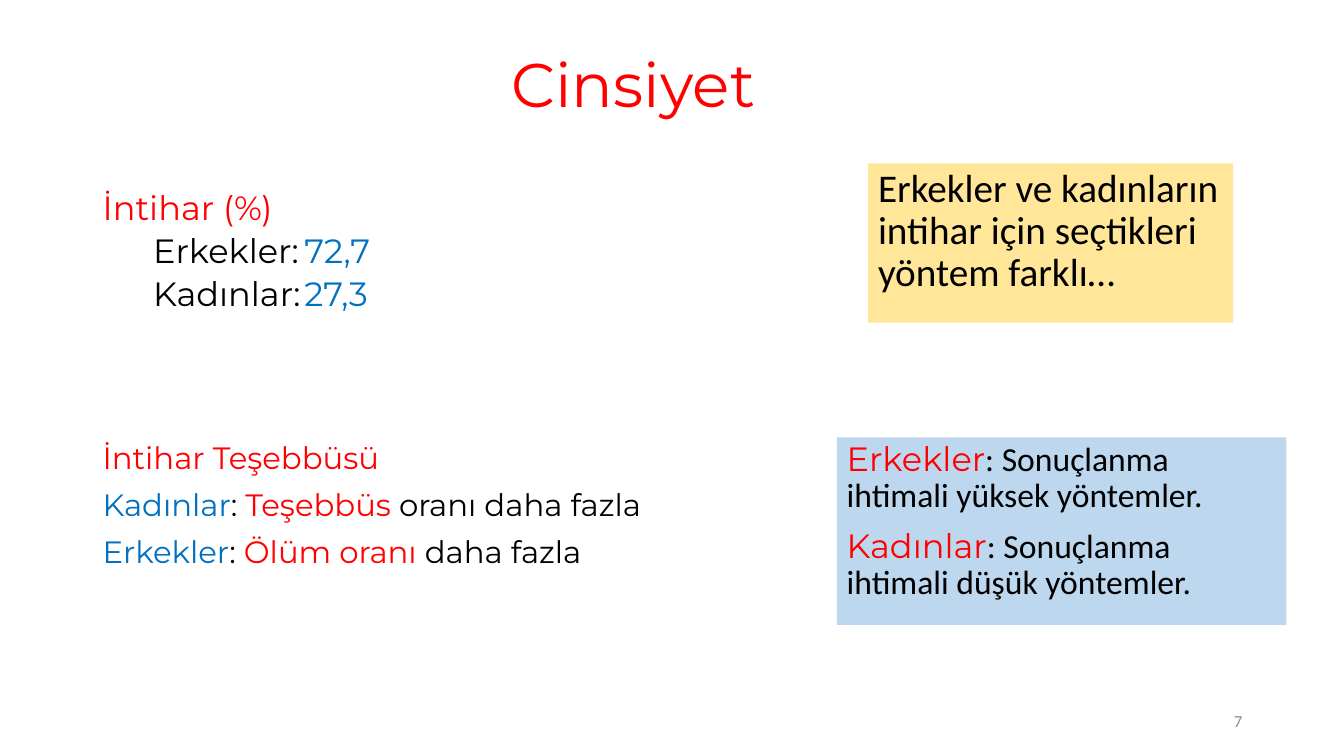
from pptx import Presentation
from pptx import util as u
from pptx.dml import color
from pptx.enum import shapes, text

RED, BLUE, BLACK, GREY = "FF0000", "0070C0", "000000", "8C8C8C"
HEADING, BODY = "Montserrat", "Calibri"


def rgb(value):
    return color.RGBColor.from_string(value)


def write(shape, paragraphs, size, font, space=0, line=0.9,
          align=text.PP_ALIGN.LEFT, anchor=text.MSO_ANCHOR.TOP):
    frame = shape.text_frame
    frame.word_wrap = True
    frame.vertical_anchor = anchor
    for index, runs in enumerate(paragraphs):
        paragraph = frame.paragraphs[0] if index == 0 else frame.add_paragraph()
        paragraph.alignment = align
        paragraph.line_spacing = line
        paragraph.space_before = u.Pt(space)
        paragraph.font.size = u.Pt(size)
        for words, run_color, *run_font in runs:
            run = paragraph.add_run()
            run.text = words
            run.font.name = run_font[0] if run_font else font
            run.font.color.rgb = rgb(run_color)
    return frame


presentation = Presentation()
presentation.slide_width = u.Inches(13.33)
presentation.slide_height = u.Inches(7.5)
slide = presentation.slides.add_slide(presentation.slide_layouts[6])

title = slide.shapes.add_textbox(u.Inches(0.92), u.Inches(0.4), u.Inches(10.72), u.Inches(0.93))
write(title, [[("Cinsiyet", RED)]], 44, HEADING,
      align=text.PP_ALIGN.CENTER, anchor=text.MSO_ANCHOR.MIDDLE)

rates = slide.shapes.add_textbox(u.Inches(0.92), u.Inches(1.85), u.Inches(6.38), u.Inches(1.46))
rates_frame = write(rates, [
    [("İntihar (%)", RED)],
    [("Erkekler:\t", BLACK), ("72,7", BLUE)],
    [("Kadınlar:\t", BLACK), ("27,3", BLUE)],
], 24, HEADING, space=5)
for paragraph in rates_frame.paragraphs[1:]:
    properties = paragraph._p.get_or_add_pPr()
    properties.set("marL", str(u.Inches(0.5)))
    properties.set("indent", "0")

number = slide.shapes.add_textbox(u.Inches(9.42), u.Inches(6.95), u.Inches(3), u.Inches(0.4))
write(number, [[("7", GREY)]], 12, BODY, line=1.0,
      align=text.PP_ALIGN.RIGHT, anchor=text.MSO_ANCHOR.MIDDLE)

panels = [
    (8.61, 1.62, 3.62, 1.58, "FFE699", 28, [
        [("Erkekler ve kadınların intihar için seçtikleri yöntem farklı…", BLACK)],
    ]),
    (8.3, 4.34, 4.46, 1.86, "BDD7EE", 24, [
        [("Erkekler", RED, HEADING), (": Sonuçlanma ihtimali yüksek yöntemler.", BLACK)],
        [("Kadınlar", RED, HEADING), (": Sonuçlanma ihtimali düşük yöntemler.", BLACK)],
    ]),
]
for left, top, width, height, fill, size, paragraphs in panels:
    panel = slide.shapes.add_shape(shapes.MSO_SHAPE.RECTANGLE, u.Inches(left), u.Inches(top),
                                   u.Inches(width), u.Inches(height))
    panel.shadow.inherit = False
    panel.fill.solid()
    panel.fill.fore_color.rgb = rgb(fill)
    panel.line.fill.background()
    write(panel, paragraphs, size, BODY, space=10)

attempts = slide.shapes.add_textbox(u.Inches(0.92), u.Inches(4.34), u.Inches(6.64), u.Inches(2.22))
attempts_frame = write(attempts, [
    [("İntihar Teşebbüsü", RED)],
    [("Kadınlar", BLUE), (": ", BLACK), ("Teşebbüs", RED), (" oranı daha fazla", BLACK)],
    [("Erkekler", BLUE), (": ", BLACK), ("Ölüm oranı ", RED), ("daha fazla", BLACK)],
], 22, HEADING, space=10)
attempts_frame.paragraphs[0].space_before = u.Pt(18)

presentation.save("out.pptx")
